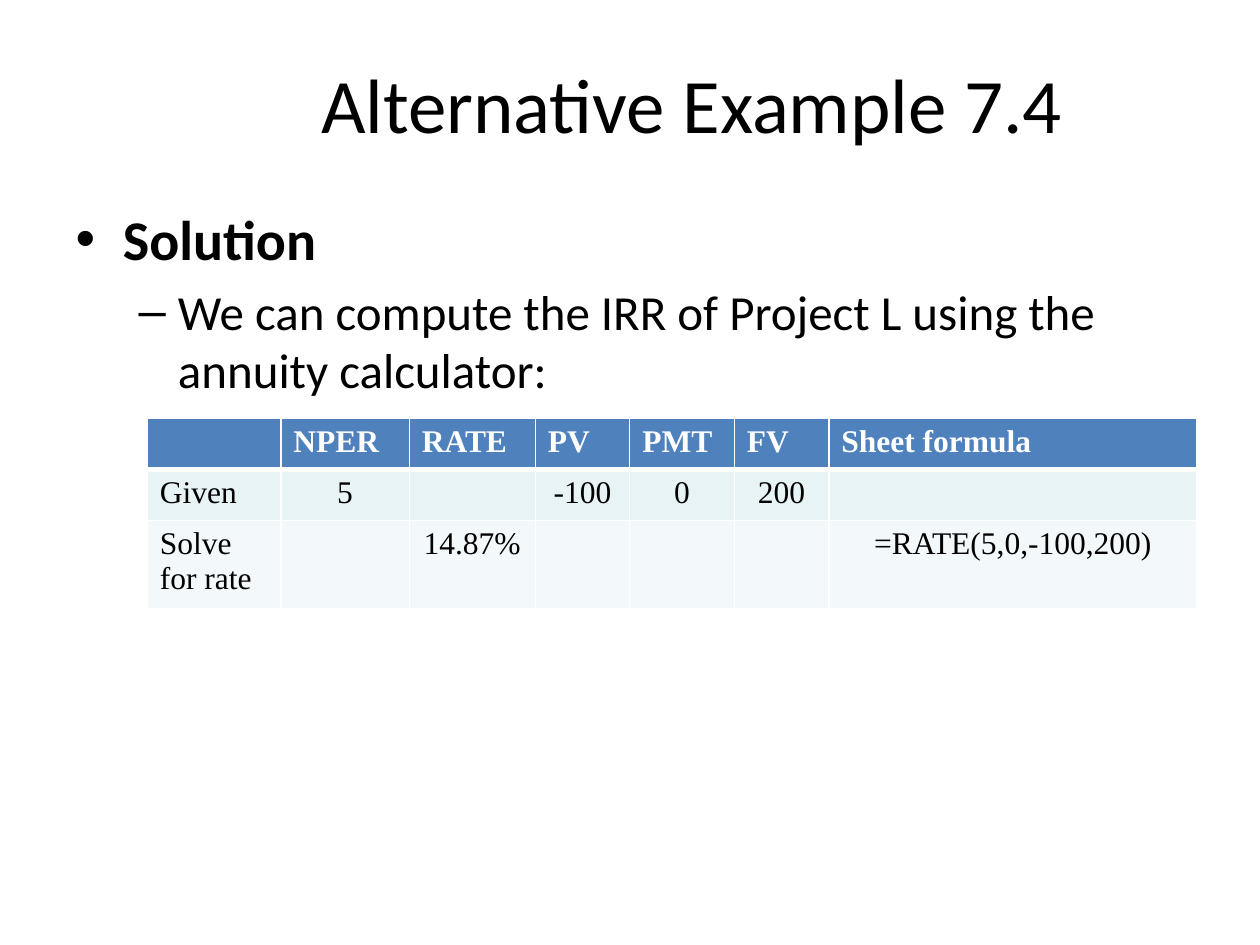
import pptx
import pptx.util
import pptx.dml.color
import pptx.enum.text
import pptx.oxml
import pptx.oxml.ns

Pt = pptx.util.Pt
ALIGN = pptx.enum.text.PP_ALIGN
ANCHOR = pptx.enum.text.MSO_ANCHOR
HUES = {"ink": "000000", "paper": "FFFFFF", "head": "4F81BD",
        "band": "E7F3F4", "pale": "F3F9FA"}
WIDTHS = [76.3, 73.4, 72, 54, 59.8, 54, 210.3]
HEIGHTS = [29.2, 29.2, 50.4]
ROWS = [
    ["", "NPER", "RATE", "PV", "PMT", "FV", "Sheet formula"],
    ["Given", "5", "", "-100", "0", "200", ""],
    ["Solve for rate", "", "14.87%", "", "", "", "=RATE(5,0,-100,200)"],
]


def hue(name):
    return pptx.dml.color.RGBColor.from_string(HUES[name])


def add_run(para, text, size, face="Calibri", color="ink", bold=False):
    run = para.add_run()
    run.text = text
    font = run.font
    font.size, font.name, font.bold = Pt(size), face, bold
    font.color.rgb = hue(color)


def place(shape, box):
    shape.left, shape.top, shape.width, shape.height = map(Pt, box)


def add_title(slide, box):
    title = slide.shapes.title
    place(title, box)
    frame = title.text_frame
    frame.vertical_anchor = ANCHOR.MIDDLE
    para = frame.paragraphs[0]
    para.alignment = ALIGN.CENTER
    add_run(para, "Alternative Example 7.4", 44)


def add_body(slide, box):
    body = slide.placeholders[1]
    place(body, box)
    frame = body.text_frame
    frame.auto_size = pptx.enum.text.MSO_AUTO_SIZE.NONE
    # Heading bullet, then its point one level down
    first = frame.paragraphs[0]
    first.space_before = Pt(0)
    add_run(first, "Solution", 32, bold=True)
    point = frame.add_paragraph()
    point.level = 1
    point.space_before = Pt(5.6)
    add_run(point, "We can compute the IRR of Project L using the "
            "annuity calculator:", 28)


def add_edges(cell, top, bottom):
    props = cell._tc.get_or_add_tcPr()
    edges = [("L", 1), ("R", 1), ("T", top), ("B", bottom)]
    for spot, (side, width) in enumerate(edges):
        props.insert(spot, pptx.oxml.parse_xml(
            f'<a:ln{side} {pptx.oxml.ns.nsdecls("a")} w="{Pt(width)}">'
            f'<a:solidFill><a:srgbClr val="{HUES["paper"]}"/></a:solidFill>'
            f'</a:ln{side}>'))


def add_grid(slide, box):
    grid = slide.shapes.add_table(len(ROWS), len(WIDTHS), *map(Pt, box)).table
    for col, width in zip(grid.columns, WIDTHS):
        col.width = Pt(width)
    for row, height in zip(grid.rows, HEIGHTS):
        row.height = Pt(height)
    fills = ["head", "band", "pale"]
    for r, row in enumerate(ROWS):
        head = r == 0
        for c, text in enumerate(row):
            cell = grid.cell(r, c)
            cell.fill.solid()
            cell.fill.fore_color.rgb = hue(fills[r])
            # A thick rule parts the header from the rows
            add_edges(cell, 3 if r == 1 else 1, 3 if head else 1)
            if text:
                para = cell.text_frame.paragraphs[0]
                para.alignment = ALIGN.LEFT if head or c == 0 else ALIGN.CENTER
                add_run(para, text, 18, "Times New Roman",
                        "paper" if head else "ink", head)


def main():
    deck = pptx.Presentation()
    deck.slide_width, deck.slide_height = Pt(720), Pt(540)
    slide = deck.slides.add_slide(deck.slide_layouts[1])
    add_title(slide, (92.2, 13.7, 606.2, 90))
    add_body(slide, (36, 113, 660.2, 365.8))
    add_grid(slide, (84.2, 239, sum(WIDTHS), sum(HEIGHTS)))
    deck.save("out.pptx")


if __name__ == "__main__":
    main()
